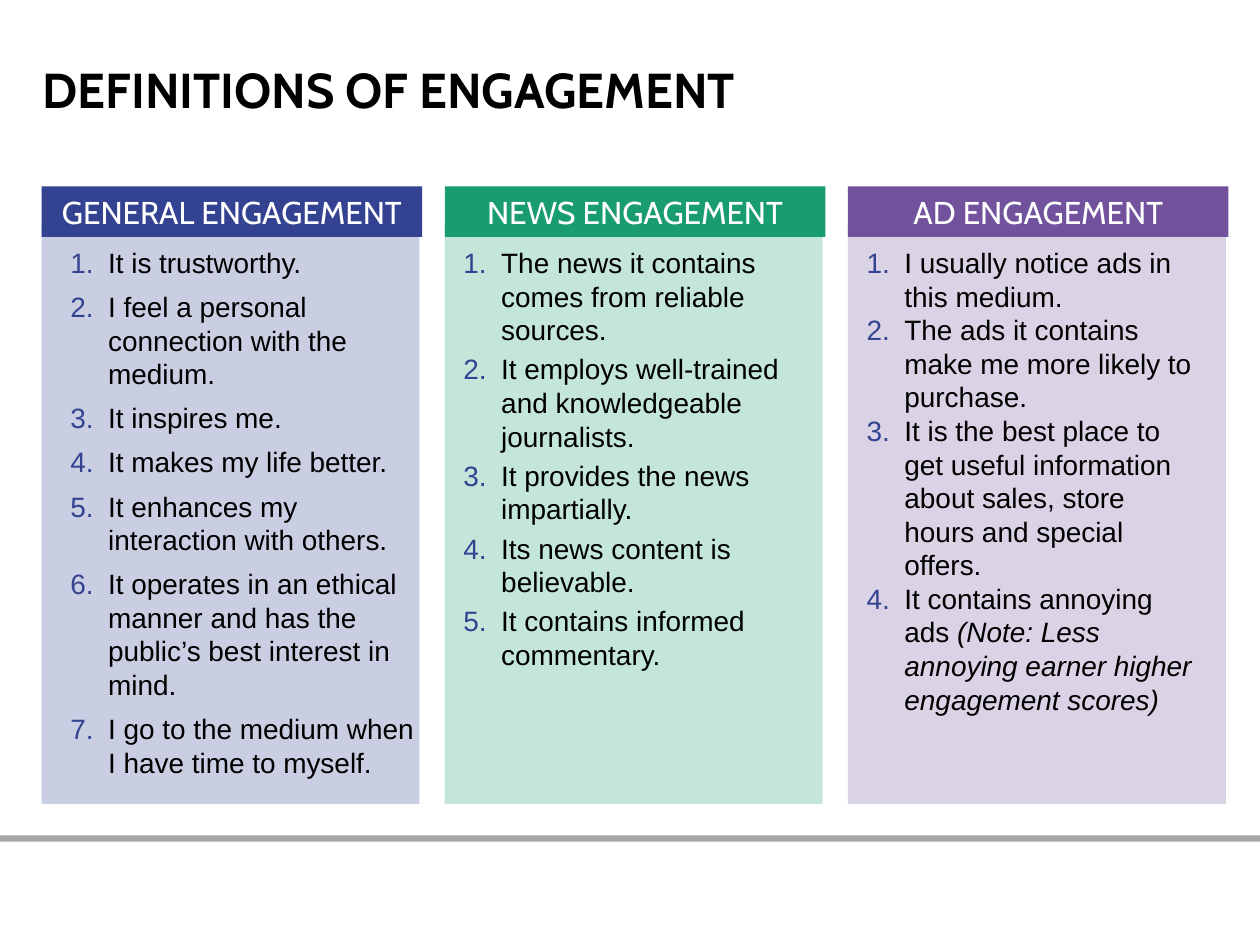
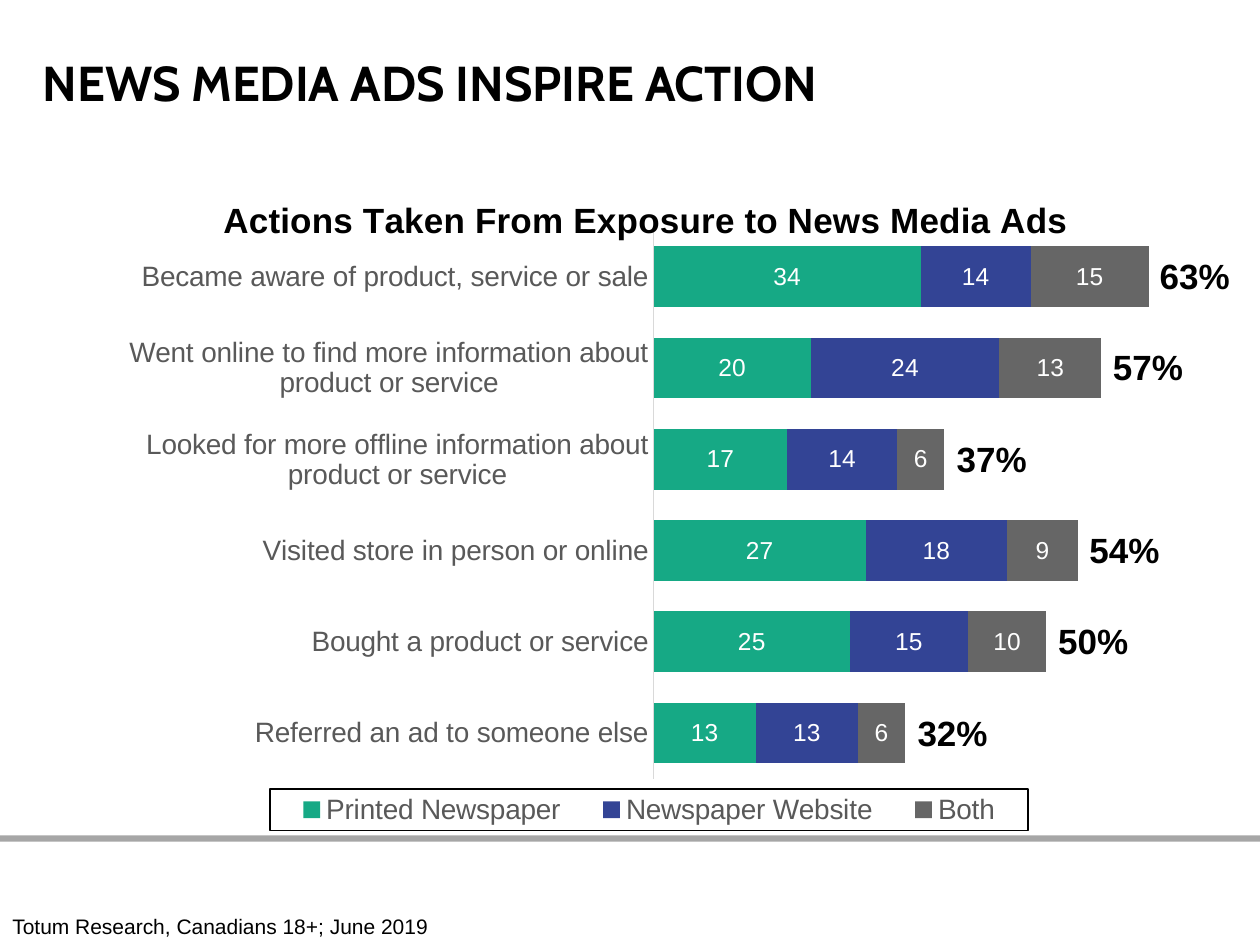
from lxml import etree
from pptx import Presentation
from pptx.chart.data import CategoryChartData
from pptx.dml.color import RGBColor
from pptx.enum.chart import XL_CHART_TYPE, XL_LEGEND_POSITION, XL_TICK_MARK
from pptx.enum.shapes import MSO_SHAPE
from pptx.enum.text import MSO_ANCHOR, PP_ALIGN
from pptx.oxml import parse_xml
from pptx.oxml.ns import nsdecls, qn
from pptx.util import Inches, Pt

RECT = MSO_SHAPE.RECTANGLE
MIDDLE = MSO_ANCHOR.MIDDLE
CENTER = PP_ALIGN.CENTER
STACKED = XL_CHART_TYPE.BAR_STACKED
BOTTOM = XL_LEGEND_POSITION.BOTTOM
NO_TICK = XL_TICK_MARK.NONE

HEAD, BODY = "Cabin", "Arial"
BLACK, WHITE, GREY = "000000", "FFFFFF", "595959"
BLUE, GREEN, PURPLE = "344391", "199C71", "72529D"

NOTE = "(Note: Less annoying earner higher engagement scores)"

# Heading, colour, text offset, text width, space between items, items
COLUMNS = [
    ("GENERAL ENGAGEMENT", BLUE, 0.13, 3.01, 6, [
        "It is trustworthy.",
        "I feel a personal connection with the medium.",
        "It inspires me.",
        "It makes my life better.",
        "It enhances my interaction with others.",
        "It operates in an ethical manner and has the public’s best interest in mind.",
        "I go to the medium when I have time to myself.",
    ]),
    ("NEWS ENGAGEMENT", GREEN, 0.05, 2.96, 3.2, [
        "The news it contains comes from reliable sources.",
        "It employs well-trained and knowledgeable journalists.",
        "It provides the news impartially.",
        "Its news content is believable.",
        "It contains informed commentary.",
    ]),
    ("AD ENGAGEMENT", PURPLE, 0.05, 2.86, 0, [
        "I usually notice ads in this medium.",
        "The ads it contains make me more likely to purchase.",
        "It is the best place to get useful information about sales, "
        "store hours and special offers.",
        "It contains annoying ads ",
    ]),
]

ACTIONS = [
    "Referred an ad to someone else",
    "Bought a product or service",
    "Visited store in person or online",
    "Looked for more offline information about product or service",
    "Went online to find more information about product or service",
    "Became aware of product, service or sale",
]
SERIES = [
    ("Printed Newspaper", "16A985", [13, 25, 27, 17, 20, 34]),
    ("Newspaper Website", "334495", [13, 15, 18, 14, 24, 14]),
    ("Both", "666666", [6, 10, 9, 6, 13, 15]),
]


def color(code):
    """Turn a hex string into a colour."""
    return RGBColor.from_string(code)


def style(font, size, code=BLACK, name=BODY, bold=False):
    """Set the look of a font."""
    font.size, font.name, font.bold = Pt(size), name, bold
    font.color.rgb = color(code)


def add_box(slide, x, y, w, h, fill, alpha=None):
    """Add a plain filled rectangle, alpha in percent."""
    box = slide.shapes.add_shape(RECT, Inches(x), Inches(y), Inches(w), Inches(h))
    box.shadow.inherit = False
    box.fill.solid()
    box.fill.fore_color.rgb = color(fill)
    box.line.fill.background()
    if alpha:
        tint = box.element.spPr.find(".//" + qn("a:srgbClr"))
        etree.SubElement(tint, qn("a:alpha"), val=str(alpha * 1000))
    return box


def add_text(slide, x, y, w, h, text, size, wrap=True, **look):
    """Add a text box of one paragraph."""
    box = slide.shapes.add_textbox(Inches(x), Inches(y), Inches(w), Inches(h))
    box.text_frame.word_wrap = wrap
    para = box.text_frame.paragraphs[0]
    para.text = text
    style(para.font, size, **look)
    return box


def add_number(para):
    """Number a paragraph with a hanging indent."""
    props = para._p.get_or_add_pPr()
    props.set("marL", str(Inches(0.3)))
    props.set("indent", str(-Inches(0.3)))
    tint = etree.SubElement(props, qn("a:buClr"))
    etree.SubElement(tint, qn("a:srgbClr"), val=BLUE)
    etree.SubElement(props, qn("a:buAutoNum"), type="arabicPeriod")


def add_list(slide, x, y, w, h, items, gap):
    """Add a numbered list and return its last paragraph."""
    box = slide.shapes.add_textbox(Inches(x), Inches(y), Inches(w), Inches(h))
    frame = box.text_frame
    frame.word_wrap = True
    for i, item in enumerate(items):
        para = frame.add_paragraph() if i else frame.paragraphs[0]
        para.text = item
        add_number(para)
        para.space_before = Pt(gap if i else 0)
        style(para.font, 16)
    return para


def add_head(slide, x, y, text, fill):
    """Add the heading band of a column."""
    band = add_box(slide, x, y, 3.02, 0.4, fill)
    band.text_frame.vertical_anchor = MIDDLE
    para = band.text_frame.paragraphs[0]
    para.text = text
    para.alignment = CENTER
    style(para.font, 18, WHITE, HEAD)


def add_slide(deck, title, top):
    """Add a slide with the grey rule and a title."""
    slide = deck.slides.add_slide(deck.slide_layouts[6])
    add_box(slide, 0, 6.63, 10, 0.05, "A6A6A6")
    add_text(slide, 0.24, top, 9, 1.25, title, 28, name=HEAD, bold=True)
    return slide


def place(part, index, inner=False, **spots):
    """Give a chart part a fixed layout in fractions of the chart."""
    old = part.find(qn("c:layout"))
    if old is not None:
        part.remove(old)
    rows = '<c:layoutTarget val="inner"/>' if inner else ""
    rows += '<c:xMode val="edge"/><c:yMode val="edge"/>'
    rows += "".join(f'<c:{key} val="{val}"/>' for key, val in spots.items())
    part.insert(index, parse_xml(
        f'<c:layout {nsdecls("c")}><c:manualLayout>{rows}</c:manualLayout></c:layout>'))


def style_axes(chart):
    """Show the category axis only."""
    cats, vals = chart.category_axis, chart.value_axis
    cats.major_tick_mark = cats.minor_tick_mark = NO_TICK
    cats.format.line.color.rgb = color("D9D9D9")
    cats.format.line.width = Pt(0.75)
    style(cats.tick_labels.font, 16, GREY)
    vals.minimum_scale, vals.maximum_scale = 0, 70
    vals.has_major_gridlines = False
    vals.visible = False


def style_legend(chart):
    """Put a framed legend below the bars."""
    chart.has_legend = True
    legend = chart.legend
    legend.position = BOTTOM
    legend.include_in_layout = False
    style(legend.font, 16, GREY)
    part = chart.element.find(".//" + qn("c:legend"))
    place(part, 1, x=0.176, y=0.909, w=0.656, h=0.06)
    part.find(qn("c:overlay")).addnext(parse_xml(
        f'<c:spPr {nsdecls("c", "a")}><a:ln w="9525"><a:solidFill>'
        f'<a:srgbClr val="{BLACK}"/></a:solidFill></a:ln></c:spPr>'))


def add_bars(slide, x, y, w, h, title):
    """Add the stacked bar chart."""
    data = CategoryChartData()
    data.categories = ACTIONS
    for name, _, vals in SERIES:
        data.add_series(name, vals)
    chart = slide.shapes.add_chart(
        STACKED, Inches(x), Inches(y), Inches(w), Inches(h), data).chart
    style(chart.font, 10)
    chart.has_title = True
    para = chart.chart_title.text_frame.paragraphs[0]
    para.text = title
    style(para.font, 20, bold=True)
    place(chart.chart_title.element, 1, x=0.13, y=0.04)
    place(chart.element.find(".//" + qn("c:plotArea")), 0, inner=True,
          x=0.508, y=0.098, w=0.476, h=0.796)
    plot = chart.plots[0]
    plot.gap_width, plot.overlap = 50, 100
    plot.vary_by_categories = False
    for bar, (_, fill, _) in zip(plot.series, SERIES):
        bar.format.fill.solid()
        bar.format.fill.fore_color.rgb = color(fill)
        bar.data_labels.show_value = True
        style(bar.data_labels.font, 14, WHITE)
    style_axes(chart)
    style_legend(chart)


def add_totals(slide):
    """Write the total of each bar at its end, from the top bar down."""
    sums = [sum(vals) for vals in zip(*(row[2] for row in SERIES))]
    for i, total in enumerate(reversed(sums)):
        add_text(slide, 5.2 + 0.062 * total, 1.97 + 0.725 * i, 0.76, 0.44,
                 f"{total}%", 20, wrap=False, bold=True)


def build_terms(deck):
    """Build the slide of three columns of definitions."""
    slide = add_slide(deck, "DEFINITIONS OF ENGAGEMENT", 0.42)
    for i, (head, fill, shift, width, gap, items) in enumerate(COLUMNS):
        left = 0.33 + 3.2 * i
        add_box(slide, left, 1.78, 3, 4.6, fill, 26)
        add_head(slide, left, 1.48, head, fill)
        last = add_list(slide, left + shift, 1.9, width, 4.4, items, gap)
    run = last.add_run()
    run.text = NOTE
    run.font.italic = True


def build_actions(deck):
    """Build the slide of the bar chart."""
    slide = add_slide(deck, "NEWS MEDIA ADS INSPIRE ACTION", 0.37)
    add_bars(slide, 0.53, 1.3, 9.17, 5.46,
             "Actions Taken From Exposure to News Media Ads")
    add_text(slide, 0, 7.2, 3.53, 0.3,
             "Totum Research, Canadians 18+; June 2019", 12, wrap=False)
    add_totals(slide)


def main():
    """Build and save the deck."""
    deck = Presentation()
    deck.slide_width, deck.slide_height = Inches(10), Inches(7.5)
    build_terms(deck)
    build_actions(deck)
    deck.save("out.pptx")


if __name__ == "__main__":
    main()
